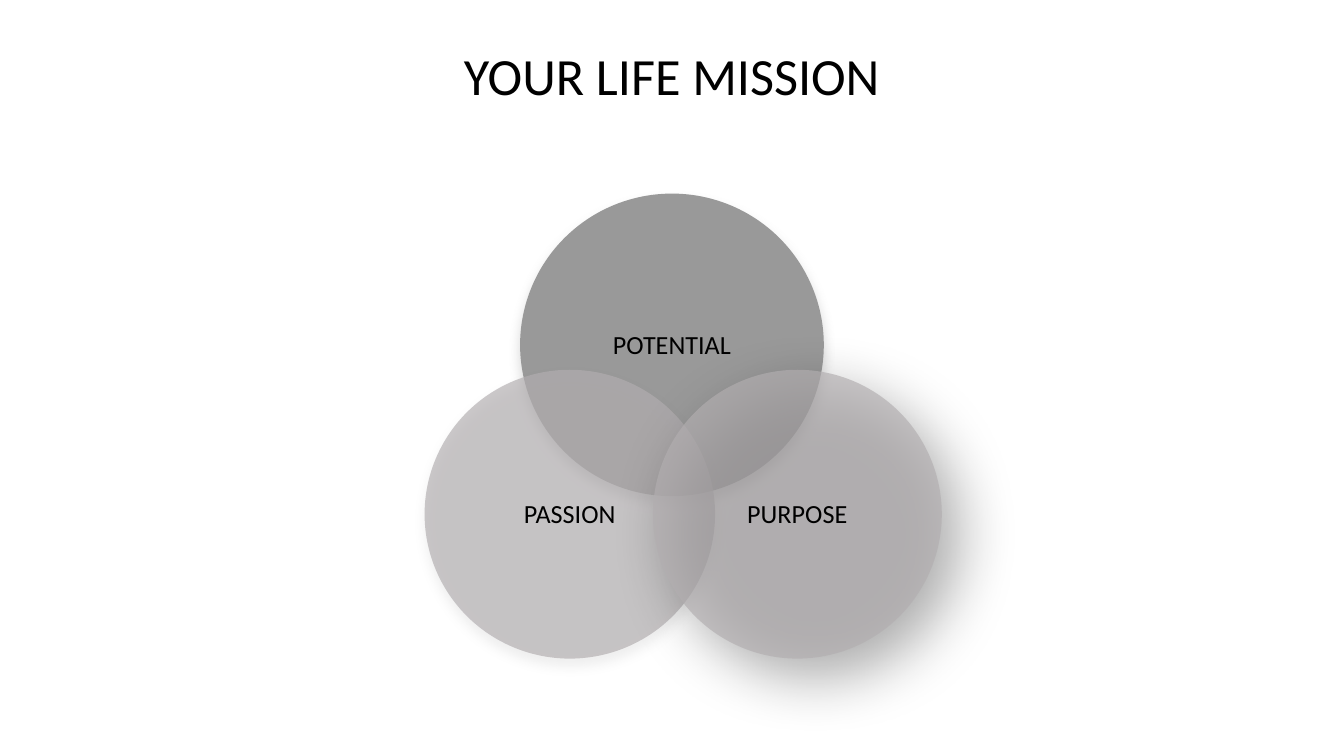
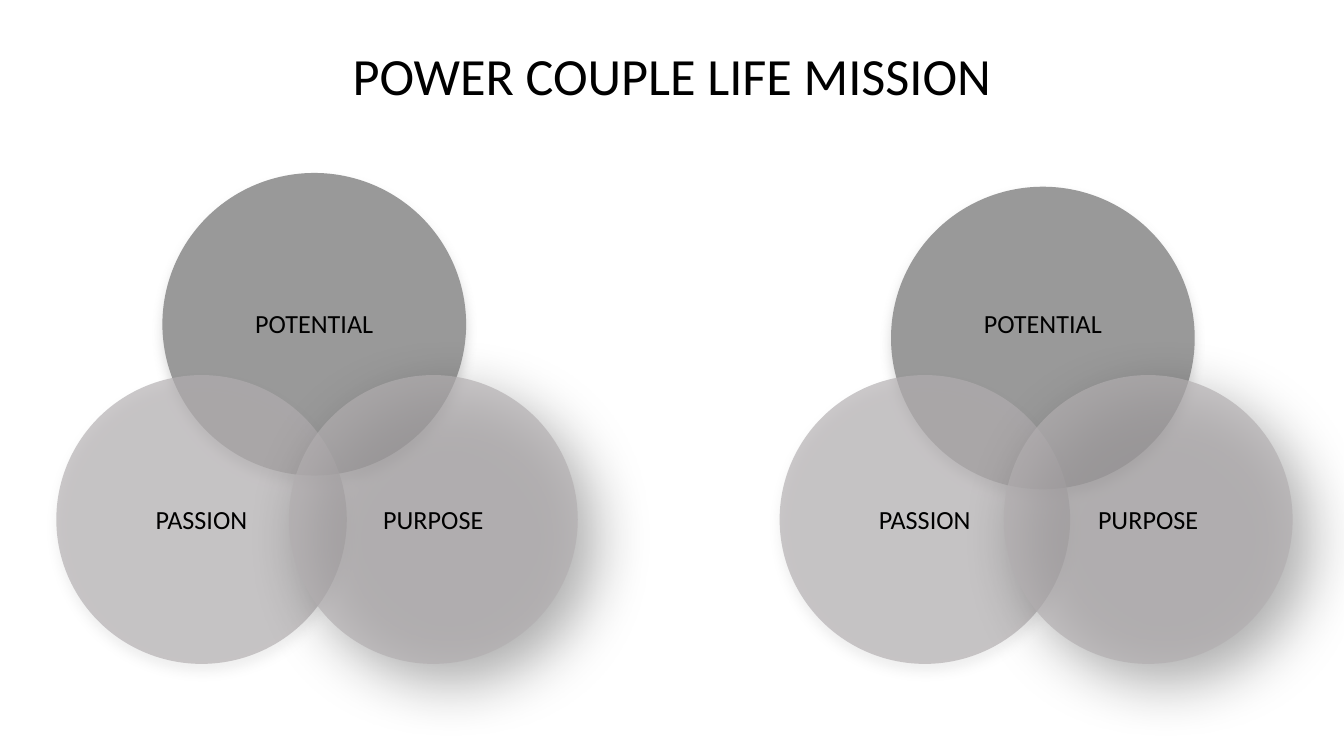
from dataclasses import dataclass

from lxml.etree import SubElement as Sub
from pptx import Presentation
from pptx.dml.color import RGBColor as RGB
from pptx.enum.shapes import MSO_SHAPE as Shape
from pptx.enum.text import MSO_ANCHOR as Anchor, MSO_AUTO_SIZE as Fit, PP_ALIGN as Align
from pptx.oxml.ns import qn
from pptx.util import Cm, Pt


@dataclass(frozen=True)
class Shade:
    color: str
    alpha: int
    blur: int
    dist: int
    angle: int


@dataclass(frozen=True)
class Theme:
    font: str = "Calibri"
    ink: str = "000000"
    back: str = "FFFFFF"
    dark: str = "999999"
    pale: str = "B2AEB0"
    title: int = 28
    label: int = 14
    inset: float = 0.25


@dataclass(frozen=True)
class Disc:
    word: str
    wide: float
    high: float
    color: str
    alpha: int
    shade: Shade
    span: float  # label width


THEME = Theme()
DISCS = (
    Disc("POTENTIAL", 5.74, 5.72, THEME.dark, 100, Shade("929292", 35, 6, 4, 90), 3.84),
    Disc("PASSION", 5.49, 5.46, THEME.pale, 67, Shade("929292", 22, 6, 4, 90), 3.15),
    Disc("PURPOSE", 5.46, 5.46, THEME.pale, 67, Shade("000000", 48, 32, 14, 48), 3.15),
)
LABEL_HIGH = 1.12


class Deck:
    def __init__(self, theme):
        self.theme = theme
        self.show = Presentation()
        self.show.slide_width, self.show.slide_height = Cm(25.4), Cm(14.29)
        self.slide = None

    def page(self, title):
        self.slide = self.show.slides.add_slide(self.show.slide_layouts[5])
        fill = self.slide.background.fill
        fill.solid()
        fill.fore_color.rgb = RGB.from_string(self.theme.back)
        head = self.slide.shapes.title
        head.left, head.top = Cm(0.86), Cm(0.2)
        head.width, head.height = Cm(23.67), Cm(2.06)
        self.letter(head.text_frame, title, self.theme.title, Anchor.BOTTOM, Fit.NONE)

    def letter(self, frame, text, size, anchor, fit):
        """Fill a text frame with one centred, styled line."""
        frame.text = text
        frame.word_wrap = True
        frame.auto_size = fit
        frame.vertical_anchor = anchor
        edge = Cm(self.theme.inset)
        frame.margin_left = frame.margin_right = edge
        frame.margin_top = frame.margin_bottom = edge
        para = frame.paragraphs[0]
        para.alignment = Align.CENTER
        para.font.name, para.font.size = self.theme.font, Pt(size)
        para.font.color.rgb = RGB.from_string(self.theme.ink)

    def disc(self, disc, x, y):
        """Draw a disc centred on x, y."""
        oval = self.slide.shapes.add_shape(
            Shape.OVAL, Cm(x - disc.wide / 2), Cm(y - disc.high / 2),
            Cm(disc.wide), Cm(disc.high))
        oval.fill.solid()
        oval.fill.fore_color.rgb = RGB.from_string(disc.color)
        oval.line.fill.background()
        oval.shadow.inherit = False
        props = oval._element.spPr
        if disc.alpha < 100:
            self.fade(props.find(".//" + qn("a:srgbClr")), disc.alpha)
        self.cast(props.find(qn("a:effectLst")), disc.shade)

    def fade(self, color, alpha):
        Sub(color, qn("a:alpha"), val=str(alpha * 1000))

    def cast(self, effects, shade):
        """Add an outer shadow to an effect list."""
        outer = Sub(effects, qn("a:outerShdw"), blurRad=str(Pt(shade.blur)),
                    dist=str(Pt(shade.dist)), dir=str(shade.angle * 60000),
                    rotWithShape="0")
        self.fade(Sub(outer, qn("a:srgbClr"), val=shade.color), shade.alpha)

    def label(self, text, x, y, wide):
        box = self.slide.shapes.add_textbox(
            Cm(x - wide / 2), Cm(y - LABEL_HIGH / 2), Cm(wide), Cm(LABEL_HIGH))
        self.letter(box.text_frame, text, self.theme.label, Anchor.TOP,
                    Fit.SHAPE_TO_FIT_TEXT)

    def venn(self, spots, lift=0):
        """Draw the three discs, then their labels; lift raises the top label."""
        for disc, (x, y) in zip(DISCS, spots):
            self.disc(disc, x, y)
        for disc, (x, y), rise in zip(DISCS, spots, (lift, 0, 0)):
            self.label(disc.word, x, y - rise, disc.span)


def main():
    deck = Deck(THEME)
    deck.page("YOUR LIFE MISSION")
    deck.venn([(12.7, 6.52), (10.77, 9.72), (15.07, 9.72)])

    deck.page("POWER COUPLE LIFE MISSION")
    deck.venn([(19.71, 6.39), (17.48, 9.82), (21.7, 9.82)], lift=0.26)
    deck.venn([(5.94, 6.13), (3.81, 9.82), (8.19, 9.82)])
    deck.show.save("out.pptx")


if __name__ == "__main__":
    main()
